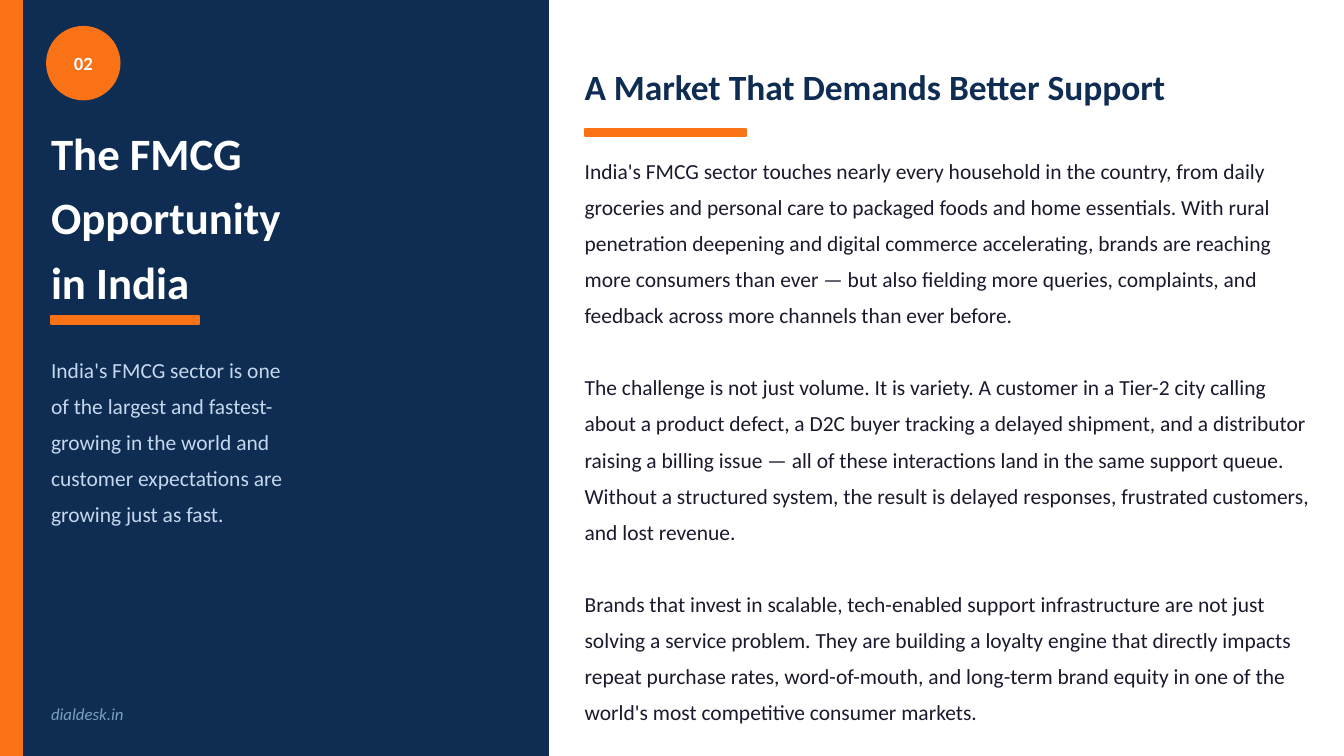
import dataclasses

import lxml.etree
import pptx
import pptx.dml.color
import pptx.enum.shapes
import pptx.enum.text
import pptx.oxml.ns
import pptx.util

PX = 4572  # EMU per px, 200 px to the inch
SLIDE_WIDTH, SLIDE_HEIGHT = 2000, 1125
FONT = "Calibri"
COLORS = {
    "orange": "F97316",
    "navy": "0F2D52",
    "white": "FFFFFF",
    "pale": "C5D8ED",
    "steel": "7A9FC2",
    "ink": "1A1A2E",
}
Align = pptx.enum.text.PP_ALIGN
Anchor = pptx.enum.text.MSO_ANCHOR
Kind = pptx.enum.shapes.MSO_SHAPE


@dataclasses.dataclass(frozen=True)
class Box:
    left: int
    top: int
    width: int
    height: int

    def emu(self) -> tuple:
        return tuple(v * PX for v in dataclasses.astuple(self))


@dataclasses.dataclass(frozen=True)
class Style:
    size: float
    color: str
    bold: bool = False
    italic: bool = False
    spacing: float = 1.0
    gap: float = 0  # points between paragraphs
    align: Align = Align.LEFT
    anchor: Anchor = Anchor.MIDDLE


def rgb(name: str) -> pptx.dml.color.RGBColor:
    return pptx.dml.color.RGBColor.from_string(COLORS[name])


def add_block(slide, kind: Kind, box: Box, color: str):
    block = slide.shapes.add_shape(kind, *box.emu())
    block.shadow.inherit = False
    block.fill.solid()
    block.fill.fore_color.rgb = rgb(color)
    block.line.color.rgb = rgb(color)
    block.line.width = pptx.util.Pt(1)
    return block


def write(shape, lines: list[str], style: Style) -> None:
    frame = shape.text_frame
    frame.word_wrap = True
    frame.auto_size = pptx.enum.text.MSO_AUTO_SIZE.NONE
    frame.vertical_anchor = style.anchor
    frame.margin_left = frame.margin_right = 0
    frame.margin_top = frame.margin_bottom = 0
    frame.text = "\n".join(lines)
    for index, paragraph in enumerate(frame.paragraphs):
        paragraph.alignment = style.align
        paragraph.line_spacing = style.spacing
        paragraph.space_before = pptx.util.Pt(style.gap if index else 0)
        if shape.is_placeholder:
            properties = paragraph._p.get_or_add_pPr()
            properties.set("marL", "0")
            properties.set("indent", "0")
            lxml.etree.SubElement(properties, pptx.oxml.ns.qn("a:buNone"))
        font = paragraph.font
        font.name = FONT
        font.size = pptx.util.Pt(style.size)
        font.bold = style.bold
        font.italic = style.italic
        font.color.rgb = rgb(style.color)


def add_text(slide, box: Box, lines: list[str], style: Style) -> None:
    write(slide.shapes.add_textbox(*box.emu()), lines, style)


def fill_placeholder(slide, holder, box: Box, lines: list[str], style: Style) -> None:
    holder.left, holder.top, holder.width, holder.height = box.emu()
    write(holder, lines, style)
    slide.shapes._spTree.append(holder._element)  # bring in front of the panel


def main() -> None:
    deck = pptx.Presentation()
    deck.slide_width, deck.slide_height = SLIDE_WIDTH * PX, SLIDE_HEIGHT * PX
    slide = deck.slides.add_slide(deck.slide_layouts[1])
    title, body = slide.placeholders[0], slide.placeholders[1]

    # Side panel, edge stripe and accent rules
    for box, color in (
        (Box(0, 0, 36, SLIDE_HEIGHT), "orange"),
        (Box(36, 0, 780, SLIDE_HEIGHT), "navy"),
        (Box(76, 470, 220, 12), "orange"),
        (Box(870, 192, 240, 10), "orange"),
    ):
        add_block(slide, Kind.RECTANGLE, box, color)

    # Section number
    badge = add_block(slide, Kind.OVAL, Box(70, 40, 108, 108), "orange")
    write(badge, ["02"], Style(10, "white", bold=True, align=Align.CENTER))

    # Panel text
    fill_placeholder(
        slide, title, Box(76, 180, 710, 270),
        ["The FMCG", "Opportunity", "in India"],
        Style(24, "white", bold=True, spacing=1.2),
    )
    add_text(
        slide, Box(76, 500, 710, 300),
        [
            "India's FMCG sector is one",
            "of the largest and fastest-",
            "growing in the world and",
            "customer expectations are",
            "growing just as fast.",
        ],
        Style(11.5, "pale", spacing=1.4),
    )
    add_text(slide, Box(76, 1040, 600, 44), ["dialdesk.in"],
             Style(9, "steel", italic=True))

    # Main column
    add_text(slide, Box(870, 76, 1080, 104),
             ["A Market That Demands Better Support"],
             Style(19, "navy", bold=True))
    fill_placeholder(
        slide, body, Box(870, 220, 1080, 860),
        [
            "India's FMCG sector touches nearly every household in the country, "
            "from daily groceries and personal care to packaged foods and home "
            "essentials. With rural penetration deepening and digital commerce "
            "accelerating, brands are reaching more consumers than ever — but "
            "also fielding more queries, complaints, and feedback across more "
            "channels than ever before.",
            "The challenge is not just volume. It is variety. A customer in a "
            "Tier-2 city calling about a product defect, a D2C buyer tracking a "
            "delayed shipment, and a distributor raising a billing issue — all "
            "of these interactions land in the same support queue. Without a "
            "structured system, the result is delayed responses, frustrated "
            "customers, and lost revenue.",
            "Brands that invest in scalable, tech-enabled support infrastructure "
            "are not just solving a service problem. They are building a loyalty "
            "engine that directly impacts repeat purchase rates, word-of-mouth, "
            "and long-term brand equity in one of the world's most competitive "
            "consumer markets.",
        ],
        Style(11.5, "ink", spacing=1.4, gap=19.4, anchor=Anchor.TOP),
    )

    deck.save("out.pptx")


if __name__ == "__main__":
    main()
